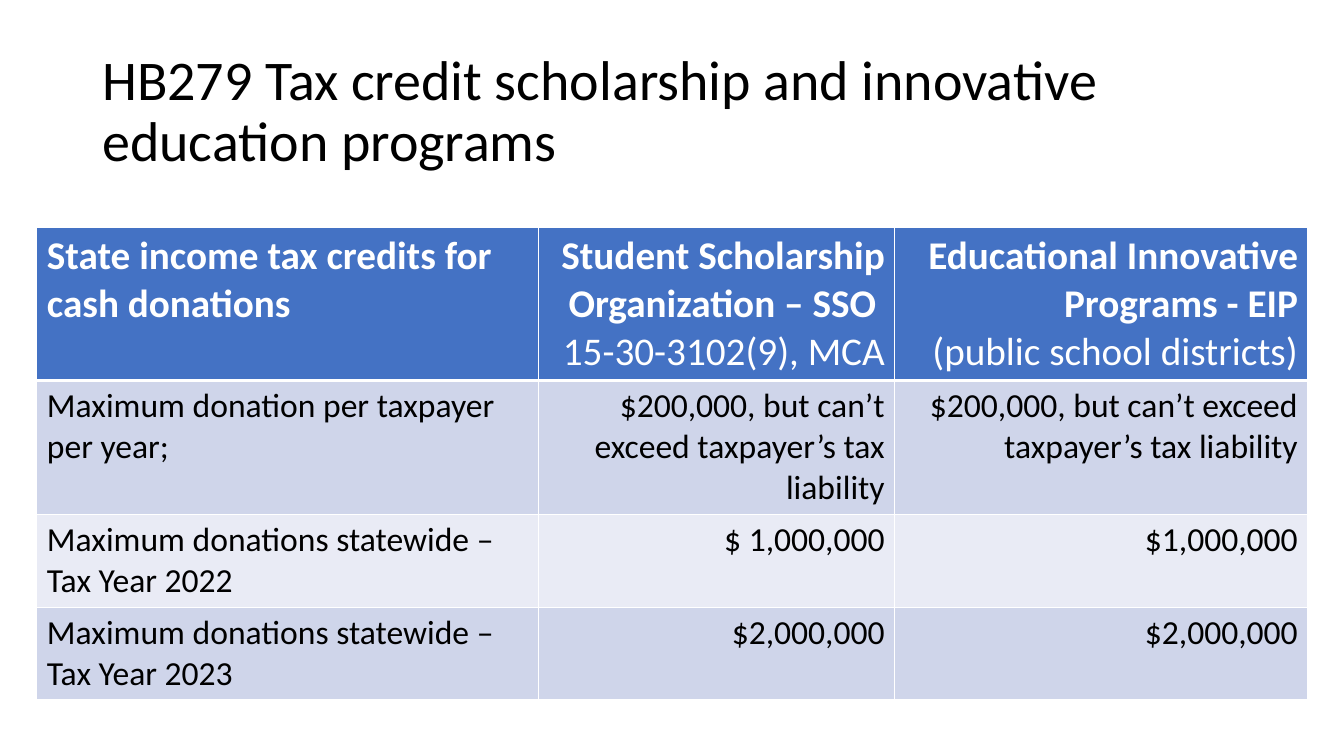
import pptx
import pptx.util
import pptx.dml.color
import pptx.enum.text
import lxml.etree
from pptx.util import Cm, Pt

COLORS = {"head": "4472C4", "dark": "CFD5EA", "light": "E9EBF5",
          "white": "FFFFFF", "black": "000000"}
NS = "http://schemas.openxmlformats.org/drawingml/2006/main"
ALIGN = pptx.enum.text.PP_ALIGN


def write(par, text, size, color, bold=False):
    run = par.add_run()
    run.text = text
    form = {"name": "Calibri", "size": Pt(size), "bold": bold}
    for key, val in form.items():
        setattr(run.font, key, val)
    run.font.color.rgb = pptx.dml.color.RGBColor.from_string(COLORS[color])


def edge(cell, side, width):
    line = lxml.etree.SubElement(cell._tc.get_or_add_tcPr(),
                                 f"{{{NS}}}ln{side}", w=str(Pt(width)))
    fill = lxml.etree.SubElement(line, f"{{{NS}}}solidFill")
    lxml.etree.SubElement(fill, f"{{{NS}}}srgbClr", val=COLORS["white"])


deck = pptx.Presentation()
deck.slide_width, deck.slide_height = Cm(33.87), Cm(19.05)
slide = deck.slides.add_slide(deck.slide_layouts[6])

# Title
title = slide.shapes.add_textbox(Cm(2.33), Cm(1.01), Cm(29.21), Cm(3.68))
frame = title.text_frame
frame.word_wrap = True
frame.vertical_anchor = pptx.enum.text.MSO_ANCHOR.MIDDLE
frame.paragraphs[0].line_spacing = 0.9
write(frame.paragraphs[0],
      "HB279 Tax credit scholarship and innovative education programs", 40, "black")

# Table content: each cell is a list of paragraphs
limit = "$200,000, but can’t exceed taxpayer’s tax liability"
rows = [
    [["State income tax credits for cash donations"],
     ["Student Scholarship Organization – SSO ", "15-30-3102(9), MCA"],
     ["Educational Innovative Programs - EIP", "(public school districts)"]],
    [["Maximum donation per taxpayer per year;"], [limit], [limit]],
    [["Maximum donations statewide – Tax Year 2022"], ["$ 1,000,000"], ["$1,000,000"]],
    [["Maximum donations statewide – Tax Year 2023"], ["$2,000,000"], ["$2,000,000"]],
]
widths = [12.65, 8.97, 10.41]
heights = [3.87, 3.38, 2.33, 2.33]
fills = ["head", "dark", "light", "dark"]

# Table
table = slide.shapes.add_table(len(rows), len(widths), Cm(0.93), Cm(5.72),
                               Cm(sum(widths)), Cm(sum(heights))).table
for col, width in zip(table.columns, widths):
    col.width = Cm(width)
for r, row in enumerate(rows):
    table.rows[r].height = Cm(heights[r])
    head = r == 0
    for c, lines in enumerate(row):
        cell = table.cell(r, c)
        edges = {"L": 1, "R": 1, "T": 3 if r == 1 else 1, "B": 3 if head else 1}
        for side, width in edges.items():
            edge(cell, side, width)
        cell.fill.solid()
        cell.fill.fore_color.rgb = pptx.dml.color.RGBColor.from_string(COLORS[fills[r]])
        for n, text in enumerate(lines):
            par = cell.text_frame.add_paragraph() if n else cell.text_frame.paragraphs[0]
            par.alignment = ALIGN.RIGHT if c else ALIGN.LEFT
            write(par, text, 28 if head else 24, "white" if head else "black",
                  head and n == 0)

deck.save("out.pptx")
